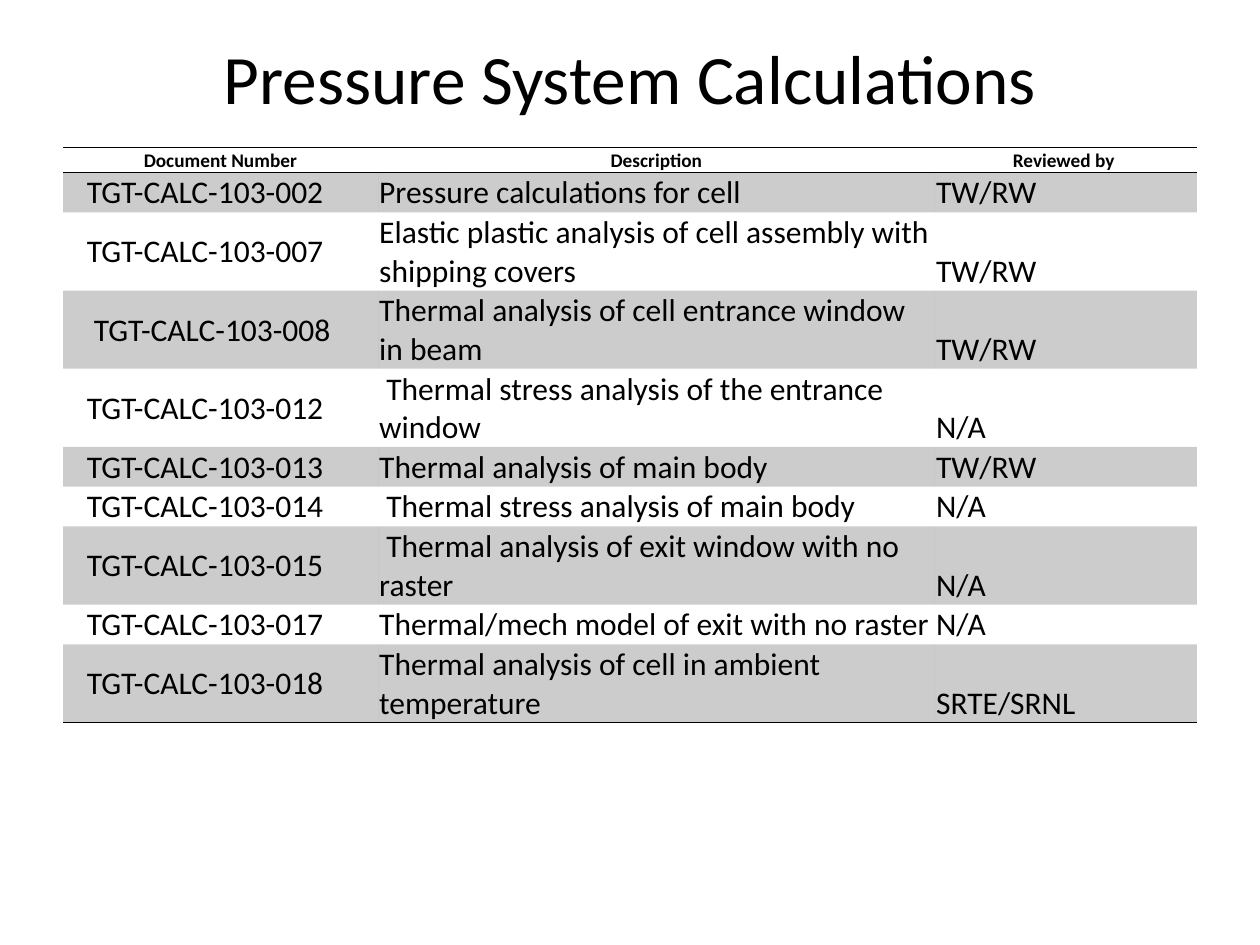
from pptx import Presentation
from pptx.dml.color import RGBColor
from pptx.enum.text import MSO_ANCHOR as Anchor, PP_ALIGN as Align
from pptx.oxml import parse_xml
from pptx.oxml.ns import nsdecls, qn
from pptx.util import Inches, Pt

BLACK = "000000"
PLAIN_TABLE_STYLE = "{2D5ABB26-0587-4C30-8999-92F81FD0307C}"
HEADER_HEIGHT, LINE_HEIGHT = 0.2, 0.31

HEADINGS = ("Document Number", "Description", "Reviewed by ")
COLUMN_WIDTHS = (2.5, 4.42, 2.08)
# Document number, description, reviewers, lines of text in the row
CALCULATIONS = (
    ("TGT-CALC-103-002", "Pressure calculations for cell", "TW/RW", 1),
    ("TGT-CALC-103-007", "Elastic plastic analysis of cell assembly with shipping covers", "TW/RW", 2),
    (" TGT-CALC-103-008", "Thermal analysis of cell entrance window in beam", "TW/RW", 2),
    ("TGT-CALC-103-012", " Thermal stress analysis of the entrance window", "N/A", 2),
    ("TGT-CALC-103-013", "Thermal analysis of main body", "TW/RW", 1),
    ("TGT-CALC-103-014", " Thermal stress analysis of main body", "N/A", 1),
    ("TGT-CALC-103-015", " Thermal analysis of exit window with no raster", "N/A", 2),
    ("TGT-CALC-103-017", "Thermal/mech model of exit with no raster", "N/A", 1),
    ("TGT-CALC-103-018", "Thermal analysis of cell in ambient temperature", "SRTE/SRNL", 2),
)


def color(hex_code):
    return RGBColor.from_string(hex_code)


def write(frame, text, size=18, bold=False, align=Align.LEFT, font="Calibri", ink=BLACK):
    paragraph = frame.paragraphs[0]
    paragraph.alignment = align
    run = paragraph.add_run()
    run.text = text
    run.font.name = font
    run.font.size = Pt(size)
    run.font.bold = bold
    run.font.color.rgb = color(ink)


def fill_cell(cell, shaded):
    """Tint the cell with 20 % black, or leave it clear."""
    if not shaded:
        cell.fill.background()
        return
    cell.fill.solid()
    cell.fill.fore_color.rgb = color(BLACK)
    tint = next(cell.fill._xPr.iter(qn("a:srgbClr")))
    tint.append(parse_xml(f'<a:alpha {nsdecls("a")} val="20000"/>'))


def rule_cell(cell, sides):
    """Draw 1 pt lines on the given sides, "T" before "B"."""
    properties = cell._tc.get_or_add_tcPr()
    for place, side in enumerate(sides):
        properties.insert(place, parse_xml(
            f'<a:ln{side} {nsdecls("a")} w="{Pt(1)}"><a:solidFill>'
            f'<a:srgbClr val="{BLACK}"/></a:solidFill></a:ln{side}>'))


class SlideBuilder:
    def __init__(self, deck):
        self.slide = deck.slides.add_slide(deck.slide_layouts[5])

    def title(self, text, left, top, width, height):
        title = self.slide.shapes.title
        title.left, title.top = Inches(left), Inches(top)
        title.width, title.height = Inches(width), Inches(height)
        title.text_frame.vertical_anchor = Anchor.MIDDLE
        write(title.text_frame, text, size=39.6, align=Align.CENTER)

    def table(self, left, top, widths, headings, records):
        heights = [HEADER_HEIGHT] + [LINE_HEIGHT * record[-1] for record in records]
        frame = self.slide.shapes.add_table(
            len(heights), len(widths), Inches(left), Inches(top),
            Inches(sum(widths)), Inches(sum(heights)))
        table = frame.table
        table.horz_banding = False
        next(frame._element.iter(qn("a:tableStyleId"))).text = PLAIN_TABLE_STYLE
        for column, width in zip(table.columns, widths):
            column.width = Inches(width)
        for row, height in zip(table.rows, heights):
            row.height = Inches(height)

        for c, heading in enumerate(headings):
            self.cell(table.cell(0, c), heading, sides="TB",
                      size=11, bold=True, align=Align.CENTER)
        for r, (*values, _) in enumerate(records, start=1):
            for c, value in enumerate(values):
                self.cell(table.cell(r, c), value, shaded=r % 2 == 1,
                          sides="B" if r == len(records) else "",
                          numbered=c == 0)

    def cell(self, cell, text, shaded=False, sides="", numbered=False, **text_format):
        """Format one cell; numbered marks an indented document number."""
        cell.margin_left = Inches(0.19 if numbered else 0.01)
        cell.margin_top = cell.margin_right = Inches(0.01)
        cell.margin_bottom = 0
        cell.vertical_anchor = Anchor.MIDDLE if numbered else Anchor.BOTTOM
        write(cell.text_frame, text, **text_format)
        fill_cell(cell, shaded)
        rule_cell(cell, sides)


def main():
    deck = Presentation()
    deck.slide_width, deck.slide_height = Inches(10), Inches(7.5)
    builder = SlideBuilder(deck)
    builder.title("Pressure System Calculations", 0.5, 0.3, 9, 0.62)
    builder.table(0.5, 1.17, COLUMN_WIDTHS, HEADINGS, CALCULATIONS)
    deck.save("out.pptx")


if __name__ == "__main__":
    main()
